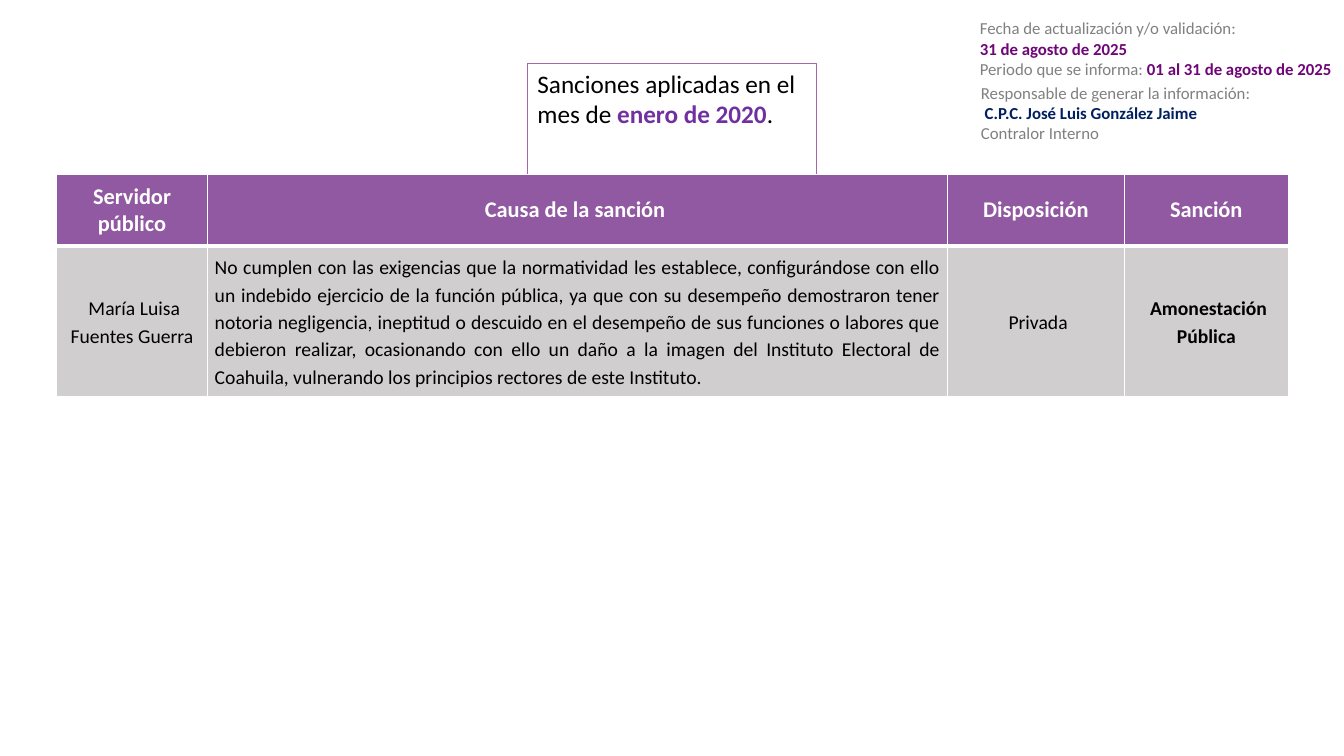
import dataclasses
import typing

import pptx
import pptx.dml.color
import pptx.enum.shapes
import pptx.enum.text
import pptx.oxml
import pptx.oxml.ns
import pptx.util

Inches = pptx.util.Inches
Pt = pptx.util.Pt
Align = pptx.enum.text.PP_ALIGN
Anchor = pptx.enum.text.MSO_ANCHOR
AutoSize = pptx.enum.text.MSO_AUTO_SIZE

FONT = "Calibri"
WHITE, BLACK, GREY = "FFFFFF", "000000", "808080"
HEADER_FILL, BODY_FILL = "9059A1", "D0CECE"
DATE_PURPLE, MONTH_PURPLE, NAVY = "6F0579", "7030A0", "002060"


@dataclasses.dataclass(frozen=True)
class Span:
    text: str
    color: str = BLACK
    bold: bool = False


@dataclasses.dataclass(frozen=True)
class Note:
    left: float
    top: float
    width: float
    height: float
    wrap: bool
    lines: list[list[Span]]


@dataclasses.dataclass(frozen=True)
class Column:
    heading: str
    entry: str
    width: float
    align: typing.Any = Align.CENTER
    bold: bool = False
    top_border: bool = False


NOTES = [
    Note(9.62, 0.13, 3.74, 0.71, False, [
        [Span("Fecha de actualización y/o validación:", GREY)],
        [Span("31 de agosto de 2025", DATE_PURPLE, True)],
        [Span("Periodo que se informa: ", GREY),
         Span("01 al 31 de agosto de 2025", DATE_PURPLE, True)],
    ]),
    Note(9.63, 0.77, 3.11, 1.54, True, [
        [Span("Responsable de generar la información:", GREY)],
        [Span(" ", GREY), Span("C.P.C. José Luis González Jaime", NAVY, True)],
        [Span("Contralor Interno", GREY)],
    ]),
]

HEADLINE = [
    Span("Sanciones aplicadas en el mes de "),
    Span("enero de 2020", MONTH_PURPLE, True),
    Span("."),
]

COLUMNS = [
    Column("Servidor público", " María Luisa Fuentes Guerra", 1.5),
    Column(
        "Causa de la sanción ",
        "No cumplen con las exigencias que la normatividad les establece, "
        "configurándose con ello un indebido ejercicio de la función pública, "
        "ya que con su desempeño demostraron tener notoria negligencia, "
        "ineptitud o descuido en el desempeño de sus funciones o labores que "
        "debieron realizar, ocasionando con ello un daño a la imagen del "
        "Instituto Electoral de Coahuila, vulnerando los principios rectores "
        "de este Instituto.",
        7.34, Align.JUSTIFY),
    Column("Disposición", " Privada", 1.75, top_border=True),
    Column("Sanción", " Amonestación Pública", 1.63, bold=True, top_border=True),
]
ROW_HEIGHTS = [0.71, 1.49]


def rgb(color: str) -> pptx.dml.color.RGBColor:
    return pptx.dml.color.RGBColor.from_string(color)


def write(paragraph, spans: list[Span], size: float) -> None:
    for span in spans:
        run = paragraph.add_run()
        run.text = span.text
        run.font.name = FONT
        run.font.size = Pt(size)
        run.font.bold = span.bold
        run.font.color.rgb = rgb(span.color)


def add_border(cell, side: str, width: float) -> None:
    cell._tc.get_or_add_tcPr().append(pptx.oxml.parse_xml(
        f'<a:ln{side} {pptx.oxml.ns.nsdecls("a")} w="{Pt(width)}">'
        f'<a:solidFill><a:srgbClr val="{WHITE}"/></a:solidFill></a:ln{side}>'))


def fill_cell(cell, span: Span, size: float, align, fill: str,
              borders: dict[str, float]) -> None:
    for side, width in borders.items():
        add_border(cell, side, width)
    cell.fill.solid()
    cell.fill.fore_color.rgb = rgb(fill)
    cell.vertical_anchor = Anchor.MIDDLE
    paragraph = cell.text_frame.paragraphs[0]
    paragraph.alignment = align
    write(paragraph, [span], size)


def add_headline(slide) -> None:
    headline = slide.shapes.title
    headline.left, headline.top = Inches(5.23), Inches(0.63)
    headline.width, headline.height = Inches(2.87), Inches(0.71)
    headline.fill.solid()
    headline.fill.fore_color.rgb = rgb(WHITE)
    headline.line.color.rgb = rgb("A963A9")
    headline.line.width = Pt(1)
    frame = headline.text_frame
    frame.word_wrap = True
    frame.auto_size = AutoSize.SHAPE_TO_FIT_TEXT
    frame.vertical_anchor = Anchor.TOP
    frame.paragraphs[0].alignment = Align.LEFT
    write(frame.paragraphs[0], HEADLINE, 18)


def add_note(slide, note: Note) -> None:
    box = slide.shapes.add_textbox(Inches(note.left), Inches(note.top),
                                   Inches(note.width), Inches(note.height))
    frame = box.text_frame
    frame.word_wrap = note.wrap
    frame.auto_size = AutoSize.SHAPE_TO_FIT_TEXT
    for index, line in enumerate(note.lines):
        paragraph = frame.add_paragraph() if index else frame.paragraphs[0]
        write(paragraph, line, 12)


def add_sanctions(slide) -> None:
    width = sum(column.width for column in COLUMNS)
    table = slide.shapes.add_table(
        len(ROW_HEIGHTS), len(COLUMNS), Inches(0.56), Inches(1.73),
        Inches(width), Inches(sum(ROW_HEIGHTS))).table
    for row, height in zip(table.rows, ROW_HEIGHTS):
        row.height = Inches(height)
    for index, column in enumerate(COLUMNS):
        table.columns[index].width = Inches(column.width)
        top = {"T": 1} if column.top_border else {}
        fill_cell(table.cell(0, index), Span(column.heading, WHITE, True), 16,
                  Align.CENTER, HEADER_FILL, {"L": 1, "R": 1, **top, "B": 3})
        entry = table.cell(1, index)
        fill_cell(entry, Span(column.entry, BLACK, column.bold), 14,
                  column.align, BODY_FILL, {"L": 1, "R": 1, "T": 3, "B": 1})
        entry.margin_left = entry.margin_right = Inches(0.07)
        entry.margin_top = entry.margin_bottom = Inches(0)
        entry.text_frame.paragraphs[0].line_spacing = 1.15


def main() -> None:
    deck = pptx.Presentation()
    deck.slide_width, deck.slide_height = Inches(13.33), Inches(7.5)
    slide = deck.slides.add_slide(deck.slide_layouts.get_by_name("Title Only"))
    add_sanctions(slide)
    add_headline(slide)
    for note in NOTES:
        add_note(slide, note)
    deck.save("out.pptx")


if __name__ == "__main__":
    main()
